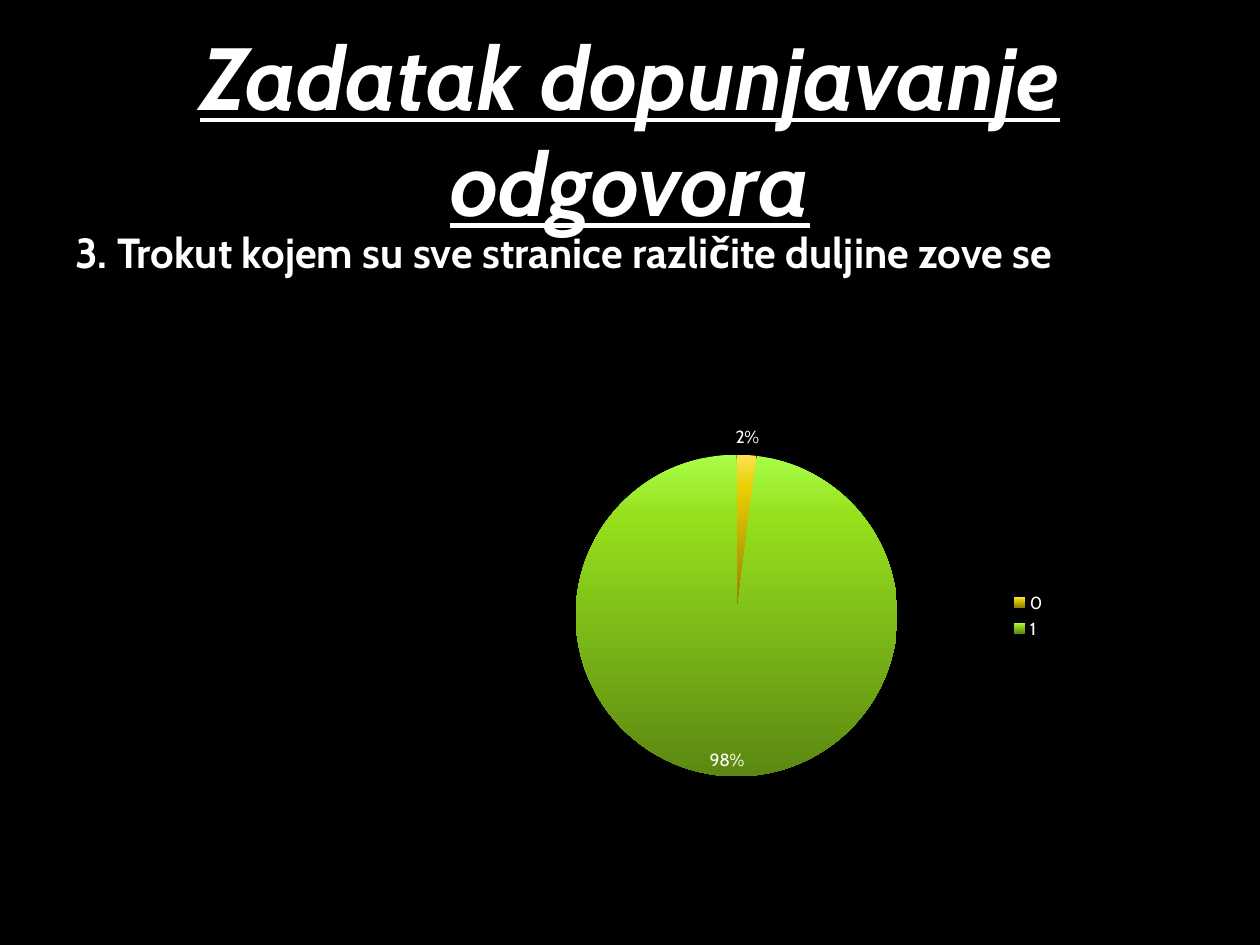
"""Builds a quiz slide with a fill-in question and a pie chart of the answers."""
from copy import deepcopy

from lxml.etree import SubElement
from pptx import Presentation
from pptx.chart.data import CategoryChartData
from pptx.dml.color import RGBColor
from pptx.enum.chart import XL_CHART_TYPE, XL_LABEL_POSITION, XL_LEGEND_POSITION
from pptx.enum.text import MSO_ANCHOR, MSO_AUTO_SIZE, PP_ALIGN
from pptx.oxml.ns import qn
from pptx.util import Inches, Pt

BLACK = RGBColor(0x00, 0x00, 0x00)
WHITE = RGBColor(0xFF, 0xFF, 0xFF)
YELLOWS = [RGBColor(0xFF, 0xE2, 0x50), RGBColor(0xE8, 0xCF, 0x05), RGBColor(0x8C, 0x7A, 0x05)]
GREENS = [RGBColor(0xA9, 0xFF, 0x47), RGBColor(0x95, 0xDF, 0x1C), RGBColor(0x5C, 0x88, 0x12)]
STOPS = [0, 0.2, 1]


class QuizSlide:
    """Holds the style and the slide; boxes are shares of the slide's size."""

    font_name = "Cabin"

    def __init__(self, deck):
        self.width, self.height = deck.slide_width, deck.slide_height
        self.slide = deck.slides.add_slide(deck.slide_layouts[5])
        background = self.slide.background.fill
        background.solid()
        background.fore_color.rgb = BLACK

    def place(self, left, top, width, height):
        return (round(left * self.width), round(top * self.height),
                round(width * self.width), round(height * self.height))

    def style(self, font, size, bold=False):
        font.name, font.size, font.bold = self.font_name, Pt(size), bold
        font.color.rgb = WHITE

    def title(self, text, box):
        heading = self.slide.shapes.title
        heading.left, heading.top, heading.width, heading.height = self.place(*box)
        frame = heading.text_frame
        frame.text = text
        frame.word_wrap, frame.auto_size = True, MSO_AUTO_SIZE.NONE
        frame.vertical_anchor = MSO_ANCHOR.MIDDLE
        paragraph = frame.paragraphs[0]
        paragraph.alignment = PP_ALIGN.CENTER
        self.style(paragraph.font, 50.4, bold=True)
        paragraph.font.italic = paragraph.font.underline = True

    def question(self, text, box, blank_end):
        frame = self.slide.shapes.add_textbox(*self.place(*box)).text_frame
        frame.word_wrap = True
        paragraph = frame.paragraphs[0]
        tabs = SubElement(paragraph._p.get_or_add_pPr(), qn("a:tabLst"))
        SubElement(tabs, qn("a:tab"), pos=str(Inches(blank_end)), algn="l")
        self.style(paragraph.font, 24, bold=True)
        paragraph.add_run().text = text
        blank = paragraph.add_run()
        blank.text = "\t"
        blank.font.underline = True

    def pie(self, answers, gradients, box, plot_area):
        data = CategoryChartData()
        data.categories = list(answers)
        data.add_series("Series 1", answers.values())
        chart = self.slide.shapes.add_chart(XL_CHART_TYPE.PIE, *self.place(*box), data).chart
        chart.has_title = False
        self.style(chart.font, 10)
        chart.has_legend = True
        chart.legend.position = XL_LEGEND_POSITION.RIGHT
        chart.legend.include_in_layout = False
        plot = chart.plots[0]
        plot.vary_by_categories = True
        plot.has_data_labels = True
        labels = plot.data_labels
        labels.show_percentage, labels.show_value = True, False
        labels.number_format, labels.number_format_is_linked = "0%", False
        labels.position = XL_LABEL_POSITION.BEST_FIT
        self.style(labels.font, 10)
        for index, colours in enumerate(gradients):
            self.shade(plot.series[0], index, colours)
        self.fix_plot(chart, plot_area)

    def shade(self, series, index, colours):
        fill = series.points[index].format.fill
        fill.gradient()
        fill.gradient_angle = 270
        stop_list = list(series._element.iter(qn("a:gsLst")))[-1]
        stop_list.append(deepcopy(stop_list[0]))
        for stop, position, colour in zip(fill.gradient_stops, STOPS, colours):
            stop.position = position
            stop.color.rgb = colour

    def fix_plot(self, chart, plot_area):
        area = chart._chartSpace.find(".//" + qn("c:plotArea"))
        for old in area.findall(qn("c:layout")):
            area.remove(old)
        layout = SubElement(area, qn("c:layout"))
        area.insert(0, layout)
        manual = SubElement(layout, qn("c:manualLayout"))
        settings = [("layoutTarget", "inner"), ("xMode", "edge"), ("yMode", "edge"),
                    *zip("xywh", plot_area)]
        for name, value in settings:
            SubElement(manual, qn("c:" + name), val=str(value))


def main():
    deck = Presentation()
    deck.slide_width, deck.slide_height = Inches(10), Inches(7.5)
    quiz = QuizSlide(deck)
    quiz.title("Zadatak dopunjavanje odgovora", (0.085, 0.016, 0.83, 0.24))
    quiz.question("3. Trokut kojem su sve stranice različite duljine zove se ",
                  (0.05, 0.233, 0.9, 0.204), blank_end=8.73)
    quiz.pie({"0": 2, "1": 98}, [YELLOWS, GREENS],
             (0.392, 0.409, 0.448, 0.485), (0.145, 0.05, 0.57, 0.9))
    deck.save("out.pptx")


if __name__ == "__main__":
    main()
